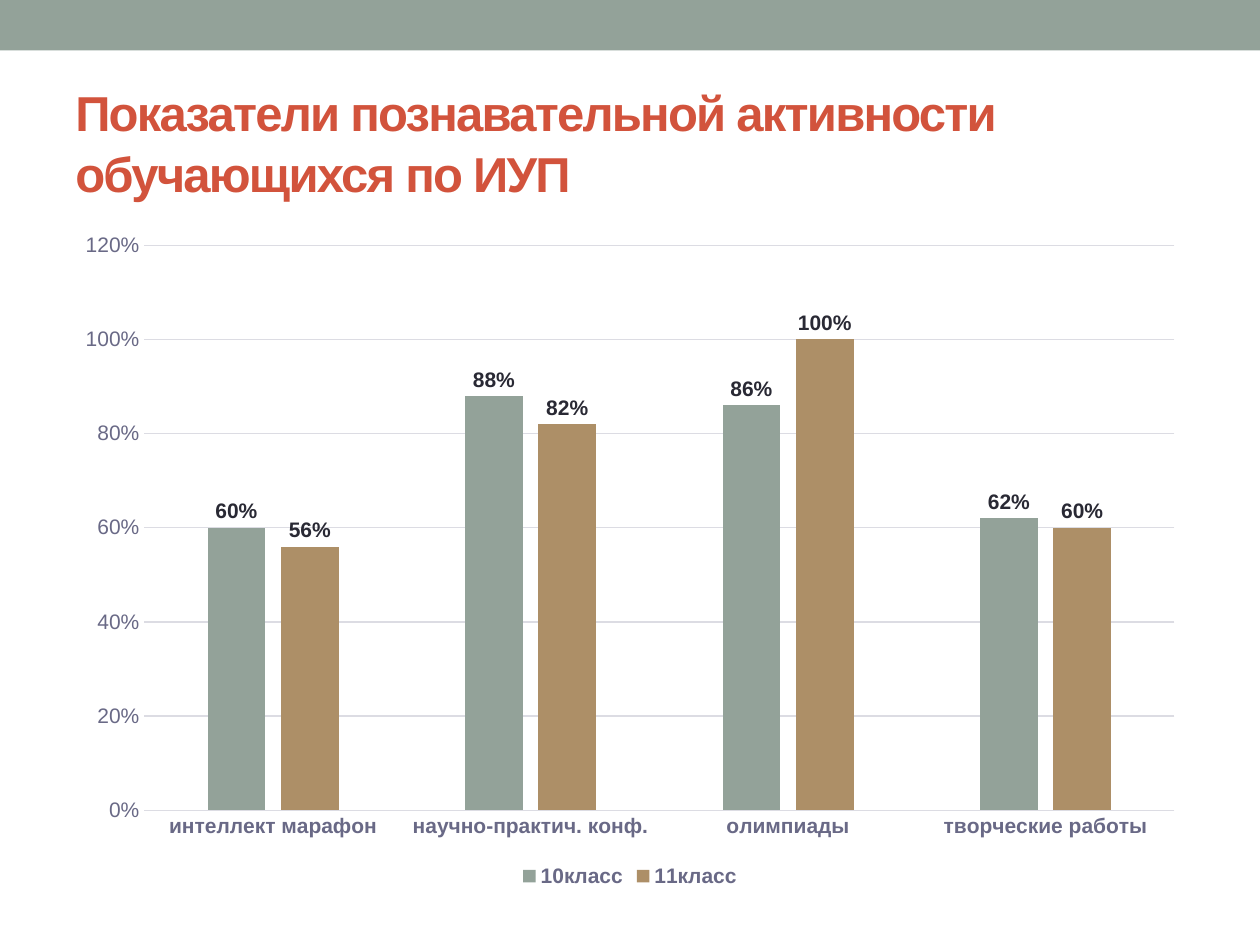
from pptx import Presentation
from pptx.chart.data import CategoryChartData
from pptx.dml.color import RGBColor
from pptx.enum import chart as charts, shapes, text
from pptx.util import Cm, Pt

COLORS = {
    "sage": "93A299",
    "sand": "AD8F67",
    "title": "D2533C",
    "ink": "292934",
    "axis": "696986",
    "grid": "DCDCE3",
}
CATEGORIES = ["интеллект марафон", "научно-практич. конф.", "олимпиады", "творческие работы"]
CLASSES = {
    "10класс": ("sage", (0.6, 0.88, 0.86, 0.62)),
    "11класс": ("sand", (0.56, 0.82, 1, 0.6)),
}


class SlideBuilder:
    font_name = "Arial"

    def __init__(self, slide):
        self.slide = slide

    def color(self, name):
        return RGBColor.from_string(COLORS[name])

    def style(self, font, size, color, bold=False):
        font.name = self.font_name
        font.size = Pt(size)
        font.bold = bold
        font.color.rgb = self.color(color)

    def fill(self, target, color):
        target.fill.solid()
        target.fill.fore_color.rgb = self.color(color)

    def line(self, target, color):
        target.line.color.rgb = self.color(color)
        target.line.width = Pt(0.75)

    def band(self, box, color):
        band = self.slide.shapes.add_shape(shapes.MSO_SHAPE.RECTANGLE, *map(Cm, box))
        band.shadow.inherit = False
        self.fill(band, color)
        band.line.fill.background()

    def title(self, box, wording):
        frame = self.slide.shapes.add_textbox(*map(Cm, box)).text_frame
        frame.word_wrap = True
        frame.vertical_anchor = text.MSO_ANCHOR.MIDDLE
        frame.text = wording
        heading = frame.paragraphs[0]
        heading.line_spacing = 1.05
        run = heading.runs[0]
        self.style(run.font, 28, "title", bold=True)
        run.font._element.set("spc", "-100")

    def column_chart(self, box, categories, classes):
        data = CategoryChartData(number_format="0%")
        data.categories = categories
        for name, (_, values) in classes.items():
            data.add_series(name, values)
        chart = self.slide.shapes.add_chart(
            charts.XL_CHART_TYPE.COLUMN_CLUSTERED, *map(Cm, box), data
        ).chart
        self.style(chart.font, 10, "ink")
        chart.has_title = False
        self.format_axes(chart)

        chart.has_legend = True
        chart.legend.position = charts.XL_LEGEND_POSITION.BOTTOM
        chart.legend.include_in_layout = False
        self.style(chart.legend.font, 12, "axis", bold=True)

        plot = chart.plots[0]
        plot.vary_by_categories = False
        plot.gap_width = 219
        plot.overlap = -27
        for series, (color, _) in zip(plot.series, classes.values()):
            self.fill(series.format, color)
            series.invert_if_negative = False
            labels = series.data_labels
            labels.show_value = True
            labels.number_format = "0%"
            labels.number_format_is_linked = False
            labels.position = charts.XL_LABEL_POSITION.OUTSIDE_END
            self.style(labels.font, 12, "ink", bold=True)

    def format_axes(self, chart):
        activities, shares = chart.category_axis, chart.value_axis
        for axis in (activities, shares):
            axis.major_tick_mark = charts.XL_TICK_MARK.NONE
            axis.minor_tick_mark = charts.XL_TICK_MARK.NONE
            self.style(axis.tick_labels.font, 12, "axis", bold=axis is activities)
        self.line(activities.format, "grid")
        shares.format.line.fill.background()
        shares.has_major_gridlines = True
        self.line(shares.major_gridlines.format, "grid")
        shares.minimum_scale = 0
        shares.maximum_scale = 1.2
        shares.major_unit = 0.2
        shares.tick_labels.number_format = "0%"
        shares.tick_labels.number_format_is_linked = False


def main():
    deck = Presentation()
    deck.slide_width, deck.slide_height = Cm(25.4), Cm(19.05)
    builder = SlideBuilder(deck.slides.add_slide(deck.slide_layouts[6]))
    builder.band((0, 0, 25.4, 1.02), "sage")
    builder.title((1.27, 1.47, 22.86, 2.74), "Показатели познавательной активности обучающихся по ИУП")
    builder.column_chart((1.27, 4.45, 22.86, 13.54), CATEGORIES, CLASSES)
    deck.save("out.pptx")


if __name__ == "__main__":
    main()
